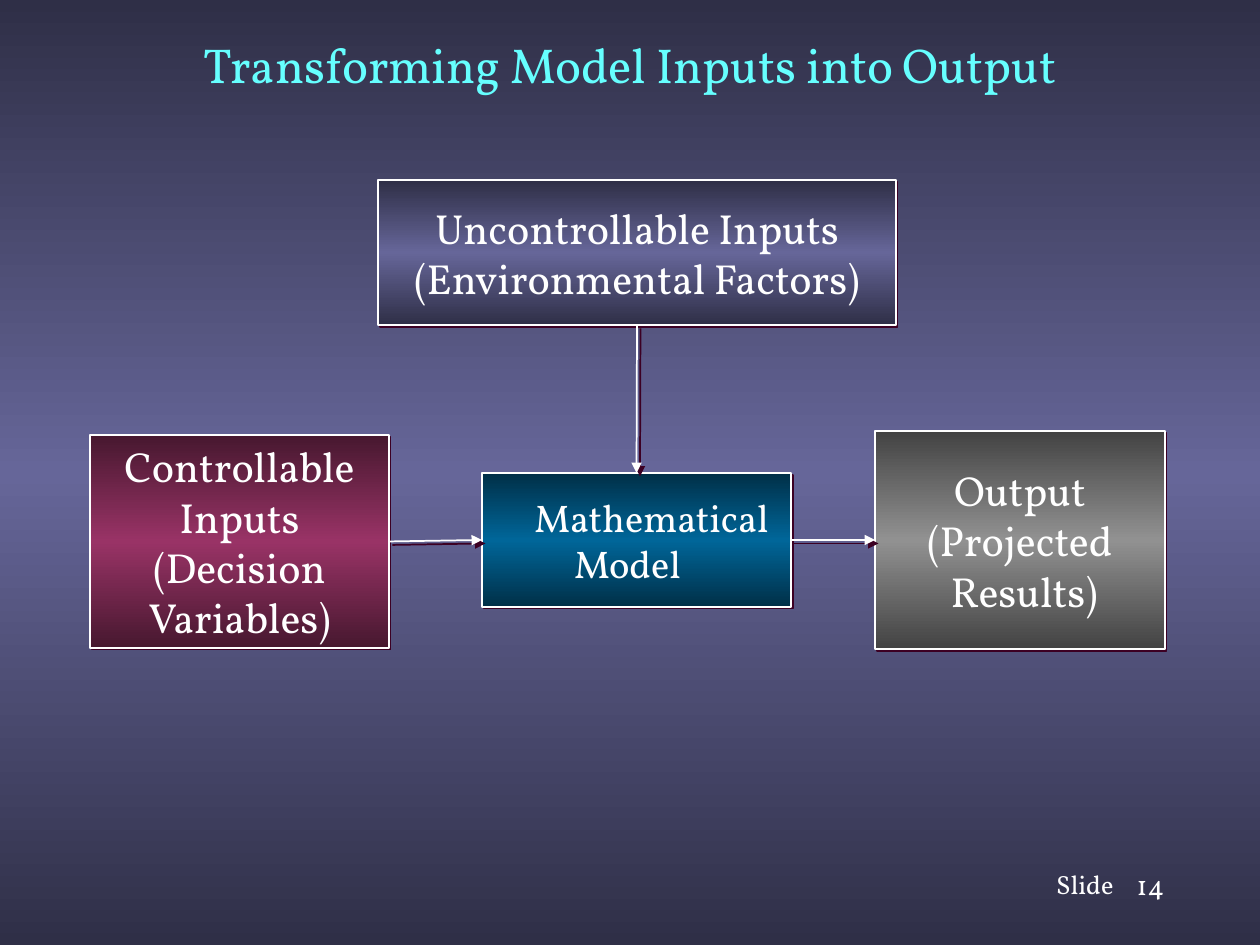
from copy import deepcopy
from dataclasses import dataclass

from lxml import etree
from pptx import Presentation
from pptx.dml.color import RGBColor
from pptx.enum.shapes import MSO_CONNECTOR, MSO_SHAPE
from pptx.enum.text import MSO_ANCHOR, PP_ALIGN
from pptx.oxml.ns import qn
from pptx.util import Emu, Pt

RECT = MSO_SHAPE.RECTANGLE
LINE = MSO_CONNECTOR.STRAIGHT
MIDDLE = MSO_ANCHOR.MIDDLE
LEFT, CENTER = PP_ALIGN.LEFT, PP_ALIGN.CENTER
TOP_SIDE, LEFT_SIDE, BOTTOM_SIDE, RIGHT_SIDE = range(4)
FONT = "Vollkorn"
WHITE, CYAN, PLUM, BLACK = "FFFFFF", "66FFFF", "3C0023", "000000"


@dataclass(frozen=True)
class Box:
    name: str
    area: tuple[int, int, int, int]
    edge: str
    core: str
    lines: tuple[str, ...]
    size: int = 24


@dataclass(frozen=True)
class Label:
    area: tuple[int, int, int, int]
    text: str
    size: int
    color: str = WHITE
    align: int = CENTER


@dataclass(frozen=True)
class Link:
    start: str
    exit: int
    end: str
    entry: int


BOXES = (
    Box("factors", (378, 180, 518, 145), "2F2F47", "666699",
        ("Uncontrollable Inputs", "(Environmental Factors)")),
    Box("inputs", (90, 435, 299, 213), "47182F", "993366",
        ("Controllable", "Inputs", "(Decision", "Variables)")),
    Box("output", (875, 431, 290, 218), "434343", "919191",
        ("Output", "(Projected", " Results)")),
    Box("model", (482, 473, 309, 134), "002F47", "006699",
        ("Mathematical", "Model"), 22),
)
LABELS = (
    Label((94, 8, 1072, 112), "Transforming Model Inputs into Output", 28, CYAN),
    Label((1056, 861, 70, 46), "Slide", 15, align=LEFT),
    Label((1108, 861, 85, 46), "14", 16),
)
LINKS = (
    Link("factors", BOTTOM_SIDE, "model", TOP_SIDE),
    Link("inputs", RIGHT_SIDE, "model", LEFT_SIDE),
    Link("model", RIGHT_SIDE, "output", LEFT_SIDE),
)


def px(n: int) -> Emu:
    return Emu(round(n * 914400 / 126))


def rgb(code: str) -> RGBColor:
    return RGBColor.from_string(code)


def blend(fill, root, edge: str, core: str) -> None:
    fill.gradient()
    fill.gradient_angle = 90
    stops = root.find(".//" + qn("a:gsLst"))
    stops.append(deepcopy(stops[-1]))
    for stop, place, code in zip(fill.gradient_stops, (0, 0.5, 1), (edge, core, edge)):
        stop.position = place
        stop.color.rgb = rgb(code)


def shade(parent, color: str, dist: float) -> None:
    group = etree.SubElement(parent, qn("a:effectLst"))
    drop = etree.SubElement(group, qn("a:outerShdw"), dist=str(Pt(dist)),
                            dir="2700000", algn="ctr", rotWithShape="0")
    etree.SubElement(drop, qn("a:srgbClr"), val=color)


def write(frame, lines: tuple[str, ...], size: int, color: str, align) -> None:
    frame.word_wrap = True
    frame.vertical_anchor = MIDDLE
    frame.margin_left = frame.margin_right = 0
    frame.margin_top = frame.margin_bottom = 0
    frame.text = "\n".join(lines)
    for para in frame.paragraphs:
        para.alignment = align
        para.font.name = FONT
        para.font.size = Pt(size)
        para.font.color.rgb = rgb(color)


def add_box(slide, box: Box):
    shape = slide.shapes.add_shape(RECT, *map(px, box.area))
    blend(shape.fill, shape._element.spPr, box.edge, box.core)
    shape.line.color.rgb = rgb(WHITE)
    shape.line.width = Pt(1)
    shade(shape._element.spPr, PLUM, 1.4)
    write(shape.text_frame, box.lines, box.size, WHITE, CENTER)
    return shape


def add_label(slide, label: Label):
    shape = slide.shapes.add_textbox(*map(px, label.area))
    write(shape.text_frame, (label.text,), label.size, label.color, label.align)
    return shape


def add_link(slide, link: Link, shapes: dict) -> None:
    line = slide.shapes.add_connector(LINE, 0, 0, 0, 0)
    line.begin_connect(shapes[link.start], link.exit)
    line.end_connect(shapes[link.end], link.entry)
    line.line.color.rgb = rgb(WHITE)
    line.line.width = Pt(1)
    props = line._element.spPr
    etree.SubElement(props.find(qn("a:ln")), qn("a:tailEnd"), type="triangle")
    shade(props, PLUM, 2.8)


def main() -> None:
    deck = Presentation()
    deck.slide_width, deck.slide_height = px(1260), px(945)
    slide = deck.slides.add_slide(deck.slide_layouts[6])
    blend(slide.background.fill, slide._element, "2F2F47", "666699")

    title, word, page = [add_label(slide, label) for label in LABELS]
    run = word.text_frame.paragraphs[0].runs[0]
    shade(run._r.get_or_add_rPr(), BLACK, 2)

    shapes = {box.name: add_box(slide, box) for box in BOXES}
    first, second = shapes["model"].text_frame.paragraphs
    first._p.get_or_add_pPr().set("marL", str(px(30)))
    second._p.get_or_add_pPr().set("marR", str(px(18)))

    for link in LINKS:
        add_link(slide, link, shapes)
    deck.save("out.pptx")


if __name__ == "__main__":
    main()
